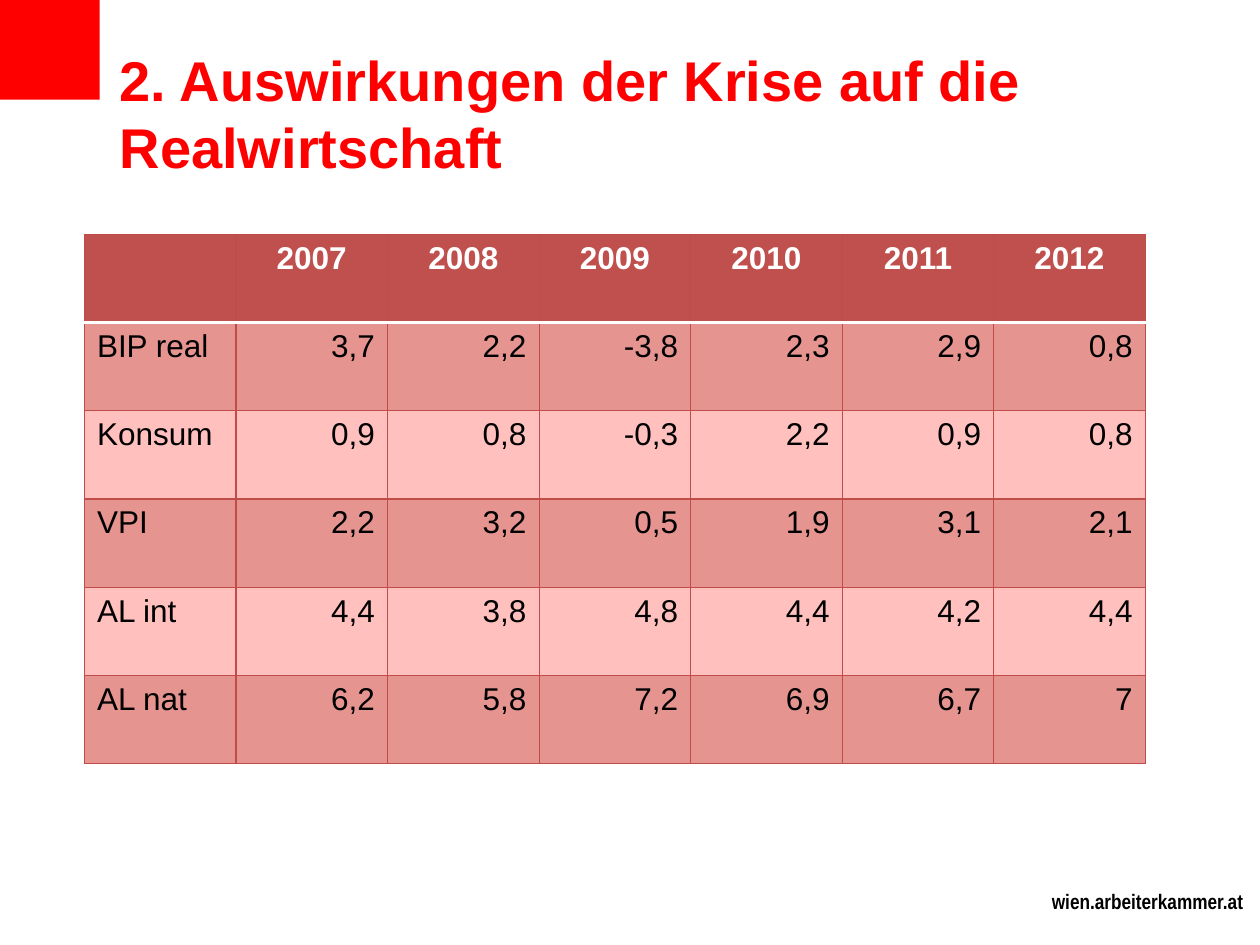
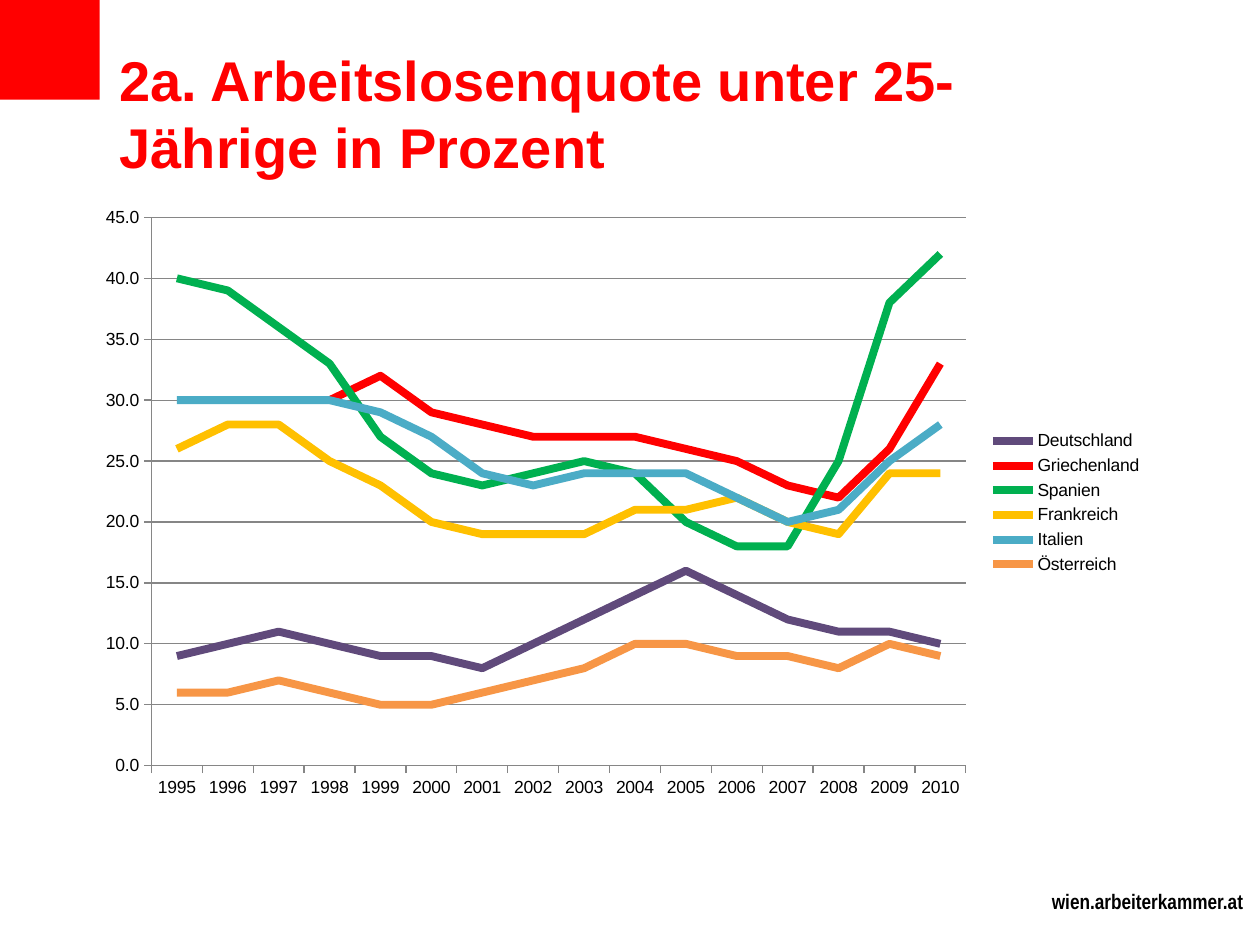
from lxml import etree
from pptx import Presentation
from pptx.chart.data import CategoryChartData
from pptx.dml.color import RGBColor
from pptx.enum.chart import XL_CHART_TYPE as ChartType
from pptx.enum.chart import XL_LEGEND_POSITION as LegendPosition
from pptx.enum.chart import XL_TICK_MARK as TickMark
from pptx.enum.shapes import MSO_SHAPE as Shape
from pptx.enum.text import PP_ALIGN as Align
from pptx.oxml.ns import qn
from pptx.util import Inches, Pt

COLORS = {
    "red": "FF0000", "black": "000000", "white": "FFFFFF",
    "header": "C0504D", "band": "E59490", "pale": "FFC0BE", "border": "BF4C48",
    "axis": "868686", "Deutschland": "604A7B", "Griechenland": "FF0000",
    "Spanien": "00B050", "Frankreich": "FFC000", "Italien": "4BACC6",
    "Österreich": "F79646",
}

INDICATORS = [
    ["", "2007", "2008", "2009", "2010", "2011", "2012"],
    ["BIP real", "3,7", "2,2", "-3,8", "2,3", "2,9", "0,8"],
    ["Konsum", "0,9", "0,8", "-0,3", "2,2", "0,9", "0,8"],
    ["VPI", "2,2", "3,2", "0,5", "1,9", "3,1", "2,1"],
    ["AL int", "4,4", "3,8", "4,8", "4,4", "4,2", "4,4"],
    ["AL nat", "6,2", "5,8", "7,2", "6,9", "6,7", "7"],
]

YOUTH_UNEMPLOYMENT = {
    "Deutschland": [9, 10, 11, 10, 9, 9, 8, 10, 12, 14, 16, 14, 12, 11, 11, 10],
    "Griechenland": [None, None, None, 30, 32, 29, 28, 27,
                     27, 27, 26, 25, 23, 22, 26, 33],
    "Spanien": [40, 39, 36, 33, 27, 24, 23, 24, 25, 24, 20, 18, 18, 25, 38, 42],
    "Frankreich": [26, 28, 28, 25, 23, 20, 19, 19, 19, 21, 21, 22, 20, 19, 24, 24],
    "Italien": [30, 30, 30, 30, 29, 27, 24, 23, 24, 24, 24, 22, 20, 21, 25, 28],
    "Österreich": [6, 6, 7, 6, 5, 5, 6, 7, 8, 10, 10, 9, 9, 8, 10, 9],
}


def rgb(name):
    return RGBColor.from_string(COLORS[name])


def set_font(font, size, color, bold=False, face="Arial"):
    font.name, font.size, font.bold = face, Pt(size), bold
    font.color.rgb = rgb(color)


def inches(box):
    return [Inches(length) for length in box]


def add_text(slide, box, text, wrap):
    frame = slide.shapes.add_textbox(*inches(box)).text_frame
    frame.word_wrap = wrap
    frame.text = text
    return frame


def add_frame(prs, heading, heading_height):
    """Slide with the corner square, web address and heading."""
    slide = prs.slides.add_slide(prs.slide_layouts[6])
    corner = slide.shapes.add_shape(Shape.RECTANGLE, *inches((0, 0, 0.79, 0.79)))
    corner.shadow.inherit = False
    corner.fill.solid()
    corner.fill.fore_color.rgb = rgb("red")
    corner.line.fill.background()

    address = add_text(slide, (8.25, 7, 1.83, 0.3), "wien.arbeiterkammer.at", False)
    set_font(address.paragraphs[0].font, 12, "black", True, "Arial Narrow")

    title = add_text(slide, (0.83, 0.3, 8.42, heading_height), heading, True)
    title.margin_left, title.margin_top = Inches(0.12), Inches(0.06)
    set_font(title.paragraphs[0].font, 32, "red", True)
    return slide


def set_border(cell, side, color, width):
    props = cell._tc.get_or_add_tcPr()
    line = etree.Element(qn(f"a:ln{side}"), w=str(Pt(width)))
    fill = etree.SubElement(line, qn("a:solidFill"))
    etree.SubElement(fill, qn("a:srgbClr"), val=COLORS[color])
    # Borders come before the fill, in the order L, R, T, B
    props.insert("LRTB".index(side), line)


def add_indicator_table(slide, box, rows):
    table = slide.shapes.add_table(len(rows), len(rows[0]), *inches(box)).table
    table.horz_banding = False
    for r, values in enumerate(rows):
        is_header = r == 0
        for c, value in enumerate(values):
            cell = table.cell(r, c)
            cell.text = value
            cell.fill.solid()
            cell.fill.fore_color.rgb = rgb(
                "header" if is_header else "band" if r % 2 else "pale")
            entry = cell.text_frame.paragraphs[0]
            if is_header:
                entry.alignment = Align.CENTER
            elif c > 0:
                entry.alignment = Align.RIGHT
            set_font(entry.font, 18, "white" if is_header else "black", is_header)
            # White rule between the header and the first row
            for side in "LRTB":
                on_rule = (r, side) in ((0, "B"), (1, "T"))
                set_border(cell, side, *(("white", 2) if on_rule else ("border", 0.75)))


def add_unemployment_chart(slide, box, first_year, countries):
    data = CategoryChartData(number_format="#,##0.0")
    count = len(next(iter(countries.values())))
    data.categories = [str(first_year + i) for i in range(count)]
    for country, rates in countries.items():
        data.add_series(country, rates)
    chart = slide.shapes.add_chart(ChartType.LINE, *inches(box), data).chart
    chart.has_title = False
    set_font(chart.font, 10, "black")
    chart.has_legend = True
    chart.legend.position = LegendPosition.RIGHT
    chart.legend.include_in_layout = False

    # Country lines
    chart.plots[0].vary_by_categories = False
    for series in chart.plots[0].series:
        series.smooth = False
        series.format.line.width = Pt(4.5)
        series.format.line.color.rgb = rgb(series.name)

    # Axes and grid
    years, percent = chart.category_axis, chart.value_axis
    percent.minimum_scale, percent.maximum_scale, percent.major_unit = 0, 45, 5
    percent.tick_labels.number_format = "#,##0.0"
    percent.tick_labels.number_format_is_linked = False
    percent.has_major_gridlines = True
    for axis in (years, percent):
        axis.major_tick_mark = TickMark.OUTSIDE
    for part in (years, percent, percent.major_gridlines):
        part.format.line.color.rgb = rgb("axis")
        part.format.line.width = Pt(0.75)


def main():
    prs = Presentation()
    prs.slide_width, prs.slide_height = Inches(10), Inches(7.5)

    economy = add_frame(prs, "2. Auswirkungen der Krise auf die Realwirtschaft", 1.25)
    add_indicator_table(economy, (0.67, 1.86, 8.42, 4.2), INDICATORS)

    youth = add_frame(prs, "2a. Arbeitslosenquote unter 25-Jährige in Prozent", 0.78)
    add_unemployment_chart(youth, (0.67, 1.55, 8.5, 4.88), 1995, YOUTH_UNEMPLOYMENT)

    prs.save("out.pptx")


if __name__ == "__main__":
    main()
